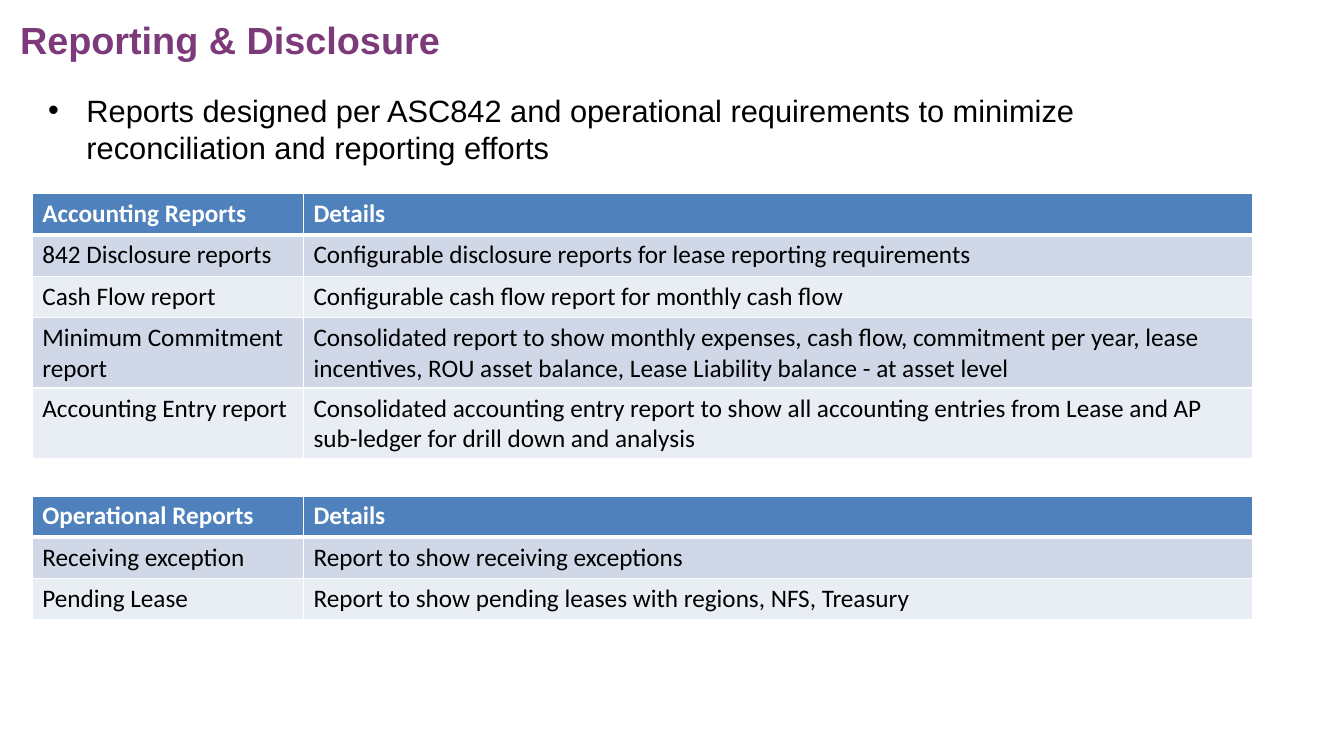
"""Build the Reporting & Disclosure slide."""
from dataclasses import dataclass

from lxml import etree
from pptx import Presentation
from pptx.dml.color import RGBColor
from pptx.enum import text
from pptx.oxml.ns import qn
from pptx.util import Inches, Pt


@dataclass(frozen=True)
class Theme:
    heading: str = "7C3A7A"
    ink: str = "000000"
    white: str = "FFFFFF"
    header: str = "4F81BD"
    bands: tuple = ("D0D8E8", "E9EDF4")
    font: str = "Arial"
    table_font: str = "Calibri"
    title_size: int = 27
    body_size: int = 22
    table_size: int = 18
    thin: int = 1
    thick: int = 3


THEME = Theme()
LEFT, ROW_HEIGHT, COLUMNS = 0.32, 0.41, (2.69, 9.41)
ACCOUNTING = [
    ("Accounting Reports", "Details"),
    ("842 Disclosure reports", "Configurable disclosure reports for lease reporting requirements"),
    ("Cash Flow report", "Configurable cash flow report for monthly cash flow"),
    ("Minimum Commitment report",
     "Consolidated report to show monthly expenses, cash flow, commitment per year, "
     "lease incentives, ROU asset balance, Lease Liability balance - at asset level"),
    ("Accounting Entry report",
     "Consolidated accounting entry report to show all accounting entries from "
     "Lease and AP sub-ledger for drill down and analysis"),
]
OPERATIONAL = [
    ("Operational Reports", "Details"),
    ("Receiving exception", "Report to show receiving exceptions"),
    ("Pending Lease", "Report to show pending leases with regions, NFS, Treasury"),
]


def write(tf, content, *, size, color=THEME.ink, font=THEME.font, bold=False, bullet=False):
    tf.word_wrap = True
    p = tf.paragraphs[0]
    if bullet:
        pPr = p._p.get_or_add_pPr()
        pPr.set("marL", str(Inches(0.38)))
        pPr.set("indent", str(-Inches(0.38)))
        etree.SubElement(pPr, qn("a:buFont")).set("typeface", font)
        etree.SubElement(pPr, qn("a:buChar")).set("char", "•")
    r = p.add_run()
    r.text = content
    r.font.name, r.font.size, r.font.bold = font, Pt(size), bold
    r.font.color.rgb = RGBColor.from_string(color)


def add_text(s, box, content, anchor=text.MSO_ANCHOR.TOP, **fmt):
    tf = s.shapes.add_textbox(*map(Inches, box)).text_frame
    tf.vertical_anchor = anchor
    write(tf, content, **fmt)


def set_borders(cell, top, bottom):
    tcPr = cell._tc.get_or_add_tcPr()
    widths = {"L": THEME.thin, "R": THEME.thin, "T": top, "B": bottom}
    for i, (side, width) in enumerate(widths.items()):
        ln = etree.Element(qn(f"a:ln{side}"), w=str(Pt(width)))
        fill = etree.SubElement(ln, qn("a:solidFill"))
        etree.SubElement(fill, qn("a:srgbClr")).set("val", THEME.white)
        tcPr.insert(i, ln)


def add_report_table(s, top, rows):
    size = map(Inches, (LEFT, top, sum(COLUMNS), ROW_HEIGHT * len(rows)))
    table = s.shapes.add_table(len(rows), len(COLUMNS), *size).table
    for column, width in zip(table.columns, COLUMNS):
        column.width = Inches(width)
    for i, row in enumerate(rows):
        table.rows[i].height = Inches(ROW_HEIGHT)
        is_header = i == 0
        color = THEME.header if is_header else THEME.bands[(i - 1) % 2]
        for j, content in enumerate(row):
            cell = table.cell(i, j)
            cell.fill.solid()
            cell.fill.fore_color.rgb = RGBColor.from_string(color)
            set_borders(cell, THEME.thick if i == 1 else THEME.thin,
                        THEME.thick if is_header else THEME.thin)
            write(cell.text_frame, content, size=THEME.table_size, font=THEME.table_font,
                  color=THEME.white if is_header else THEME.ink, bold=is_header)


def main():
    prs = Presentation()
    prs.slide_width, prs.slide_height = Inches(13.33), Inches(7.5)
    s = prs.slides.add_slide(prs.slide_layouts[6])
    add_text(s, (0.1, 0.11, 9.71, 0.56), "Reporting & Disclosure",
             anchor=text.MSO_ANCHOR.BOTTOM, size=THEME.title_size,
             color=THEME.heading, bold=True)
    add_report_table(s, 1.92, ACCOUNTING)
    add_text(s, (0.38, 0.86, 11.36, 0.86),
             "Reports designed per ASC842 and operational requirements to minimize "
             "reconciliation and reporting efforts", size=THEME.body_size, bullet=True)
    add_report_table(s, 4.92, OPERATIONAL)
    prs.save("out.pptx")


if __name__ == "__main__":
    main()
